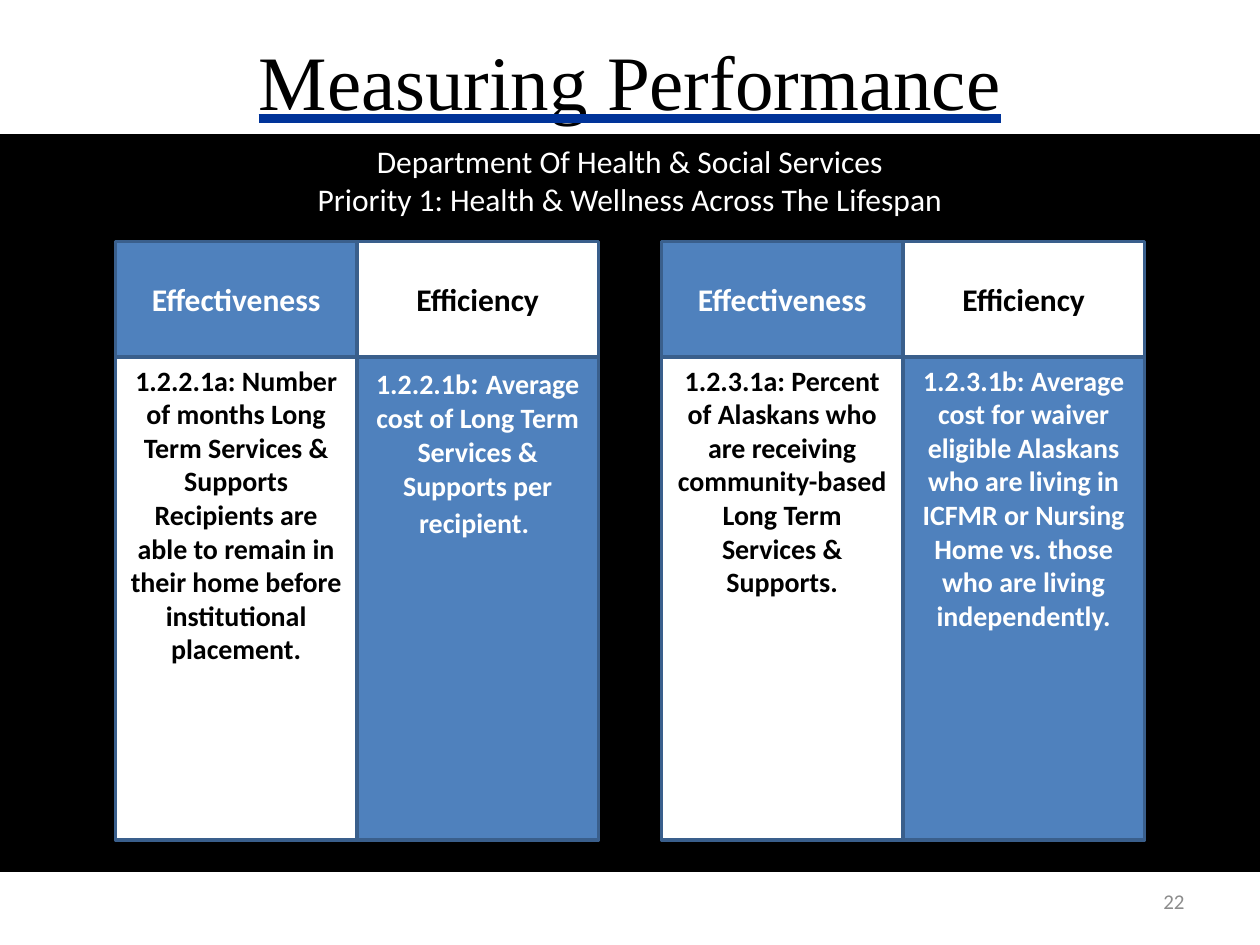
from dataclasses import dataclass

from lxml import etree
from pptx import Presentation
from pptx import util as u
from pptx.dml.color import RGBColor
from pptx.enum import shapes, text
from pptx.oxml.ns import qn

BLACK, WHITE, BLUE, EDGE = "000000", "FFFFFF", "4F81BD", "3A5F8C"
WIDE, HEAD, BODY = 23 / 12, 11 / 12, 23 / 6
LEFT, TOP, STEP = 11 / 12, 23 / 12, 13 / 3


@dataclass
class Run:
    words: str
    size: float | None = None


@dataclass
class Style:
    size: float
    color: str
    face: str = "Calibri"
    bold: bool = False
    align: text.PP_ALIGN = text.PP_ALIGN.CENTER
    anchor: text.MSO_ANCHOR = text.MSO_ANCHOR.MIDDLE


@dataclass
class Pair:
    effect: list[Run]
    thrift: list[Run]


PAIRS = [
    Pair(
        [Run("1.2.2.1a: Number of months Long Term Services & Supports Recipients "
             "are able to remain in their home before institutional placement.")],
        [Run("1.2.2.1b"), Run(": ", 18),
         Run("Average cost of Long Term Services & Supports per recipient."),
         Run(" ", 18)],
    ),
    Pair(
        [Run("1.2.3.1a: Percent of Alaskans who are receiving community-based "
             "Long Term Services & Supports.")],
        [Run("1.2.3.1b: Average cost for waiver eligible Alaskans who are living in "
             "ICFMR or Nursing Home vs. those who are living independently.")],
    ),
]


def tint(code: str) -> RGBColor:
    return RGBColor.from_string(code)


def write(shape, lines: list[list[Run]], style: Style) -> None:
    frame = shape.text_frame
    frame.word_wrap = True
    frame.vertical_anchor = style.anchor
    for i, line in enumerate(lines):
        para = frame.add_paragraph() if i else frame.paragraphs[0]
        para.alignment = style.align
        font = para.font
        font.size, font.name, font.bold = u.Pt(style.size), style.face, style.bold
        font.color.rgb = tint(style.color)
        for part in line:
            run = para.add_run()
            run.text = part.words
            if part.size:
                run.font.size = u.Pt(part.size)


def label(slide, box: tuple, words: str, style: Style):
    shape = slide.shapes.add_textbox(*map(u.Inches, box))
    write(shape, [[Run(words)]], style)
    return shape


def block(slide, box: tuple, fill: str, edge: str, lines: list[list[Run]], style: Style) -> None:
    shape = slide.shapes.add_shape(shapes.MSO_SHAPE.RECTANGLE, *map(u.Inches, box))
    shape.shadow.inherit = False
    shape.fill.solid()
    shape.fill.fore_color.rgb = tint(fill)
    shape.line.color.rgb = tint(edge)
    shape.line.width = u.Pt(2)
    write(shape, lines, style)


def rule(shape, color: str) -> None:
    run = shape.text_frame.paragraphs[0].runs[0]
    run.font.underline = text.MSO_UNDERLINE.HEAVY_LINE
    line = etree.SubElement(run.font._element, qn("a:uFill"))
    solid = etree.SubElement(line, qn("a:solidFill"))
    etree.SubElement(solid, qn("a:srgbClr"), val=color)


def table(slide, left: float, pair: Pair) -> None:
    cols = [("Effectiveness", pair.effect, BLUE, WHITE, WHITE, BLACK),
            ("Efficiency", pair.thrift, WHITE, BLACK, BLUE, WHITE)]
    for i, (name, body, fill, ink, base, tone) in enumerate(cols):
        x = left + i * WIDE
        block(slide, (x, TOP + HEAD, WIDE, BODY), base, EDGE, [body],
              Style(16, tone, bold=True, anchor=text.MSO_ANCHOR.TOP))
        block(slide, (x, TOP, WIDE, HEAD), fill, EDGE, [[Run(name)]],
              Style(18, ink, bold=True))


def main() -> None:
    deck = Presentation()
    deck.slide_width, deck.slide_height = u.Inches(10), u.Inches(7.5)
    slide = deck.slides.add_slide(deck.slide_layouts[6])
    title = label(slide, (0.5, 0.17, 9, 0.92), "Measuring Performance",
                  Style(44, BLACK, "Times New Roman"))
    rule(title, "003399")
    block(slide, (0, 1.08, 10, 5.83), BLACK, BLACK,
          [[Run("Department Of Health & Social Services")],
           [Run("Priority 1: Health & Wellness Across The Lifespan")]],
          Style(18, WHITE, anchor=text.MSO_ANCHOR.TOP))
    for i, pair in enumerate(PAIRS):
        table(slide, LEFT + i * STEP, pair)
    label(slide, (7.17, 6.95, 2.33, 0.4), "22",
          Style(12, "8C8C8C", align=text.PP_ALIGN.RIGHT))
    deck.save("out.pptx")


if __name__ == "__main__":
    main()
